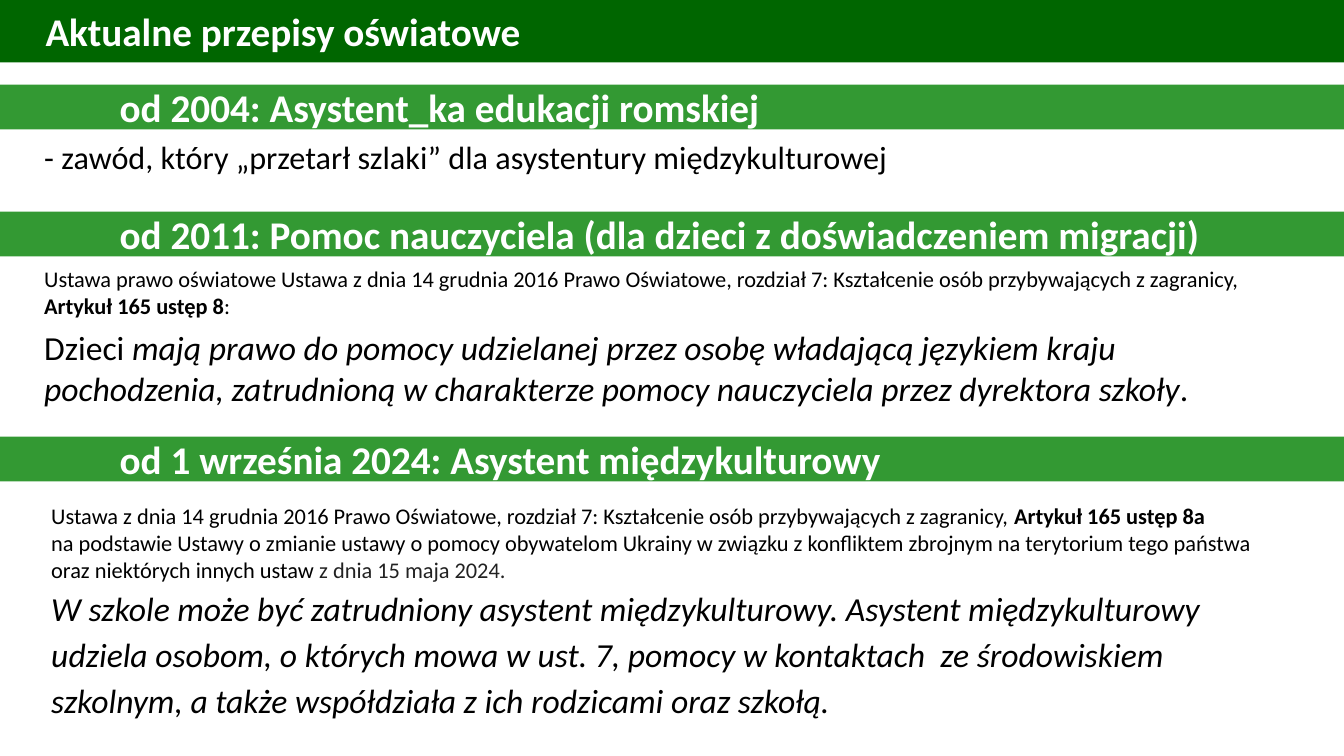
from dataclasses import dataclass

from pptx import Presentation
from pptx.dml.color import RGBColor
from pptx.enum.shapes import MSO_SHAPE
from pptx.enum.text import MSO_ANCHOR, MSO_AUTO_SIZE, PP_ALIGN
from pptx.util import Pt

DARK_GREEN = RGBColor(0x00, 0x66, 0x00)
GREEN = RGBColor(0x33, 0x99, 0x33)
WHITE = RGBColor(0xFF, 0xFF, 0xFF)
BLACK = RGBColor(0x00, 0x00, 0x00)
DARK_GREY = RGBColor(0x22, 0x22, 0x22)
FONT = "Calibri"
PAGE_WIDTH = 960
PAGE_HEIGHT = 540
BAND_HEIGHT = 32
BODY_WIDTH = 900.7


@dataclass
class Box:
    left: float
    top: float
    width: float
    height: float

    def lengths(self):
        return [Pt(value) for value in (self.left, self.top, self.width, self.height)]


@dataclass
class Span:
    text: str
    bold: bool = False
    italic: bool = False
    color: RGBColor = BLACK
    line_break: bool = False


@dataclass
class Para:
    size: float
    spans: list
    space_before: float = 0
    line_spacing: float = 1.0


def style(font, size, color, bold=False, italic=False):
    font.name = FONT
    font.size = Pt(size)
    font.color.rgb = color
    font.bold = bold
    font.italic = italic


def add_band(page, box, text, color, indent):
    band = page.shapes.add_shape(MSO_SHAPE.RECTANGLE, *box.lengths())
    band.shadow.inherit = False
    band.fill.solid()
    band.fill.fore_color.rgb = color
    band.line.fill.background()
    frame = band.text_frame
    frame.text = text
    frame.word_wrap = True
    frame.vertical_anchor = MSO_ANCHOR.MIDDLE
    frame.margin_left = Pt(indent)
    para = frame.paragraphs[0]
    para.alignment = PP_ALIGN.LEFT
    style(para.runs[0].font, 28, WHITE, bold=True)


def add_body(page, box, contents):
    frame = page.shapes.add_textbox(*box.lengths()).text_frame
    frame.word_wrap = True
    frame.auto_size = MSO_AUTO_SIZE.SHAPE_TO_FIT_TEXT
    for index, content in enumerate(contents):
        para = frame.add_paragraph() if index else frame.paragraphs[0]
        para.space_before = Pt(content.space_before)
        para.line_spacing = content.line_spacing
        for span in content.spans:
            run = para.add_run()
            run.text = span.text
            style(run.font, content.size, span.color, span.bold, span.italic)
            if span.line_break:
                para.add_line_break()


def add_section(page, box, heading, body_left, body_offset, contents):
    band_box = Box(box.left, box.top, box.width, BAND_HEIGHT)
    add_band(page, band_box, heading, GREEN, 85.5)
    body_box = Box(box.left + body_left, box.top + body_offset,
                   BODY_WIDTH, box.height - body_offset)
    add_body(page, body_box, contents)


ROMA_ASSISTANT = [
    Para(23, [Span("- zawód, który „przetarł szlaki” dla asystentury międzykulturowej")]),
]
TEACHER_AID = [
    Para(16, [
        Span("Ustawa prawo oświatowe Ustawa z dnia 14 grudnia 2016 Prawo Oświatowe, "
             "rozdział 7: Kształcenie osób przybywających z zagranicy, "),
        Span("Artykuł 165 ustęp 8", bold=True),
        Span(":"),
    ]),
    Para(24, [
        Span("Dzieci "),
        Span("mają prawo do pomocy udzielanej przez osobę władającą językiem kraju "
             "pochodzenia, zatrudnioną w charakterze pomocy nauczyciela przez "
             "dyrektora szkoły", italic=True),
        Span("."),
    ], space_before=6),
]
INTERCULTURAL_ASSISTANT = [
    Para(16, [
        Span("Ustawa z dnia 14 grudnia 2016 Prawo Oświatowe, rozdział 7: "
             "Kształcenie osób przybywających z zagranicy, "),
        Span("Artykuł 165 ustęp 8a", bold=True, line_break=True),
        Span("na podstawie Ustawy o zmianie ustawy o pomocy obywatelom Ukrainy "
             "w związku z konfliktem zbrojnym na terytorium tego państwa "
             "oraz niektórych innych ustaw"),
        Span(" z dnia 15 maja 2024.", color=DARK_GREY),
    ]),
    Para(24, [
        Span("W szkole może być zatrudniony asystent międzykulturowy. Asystent "
             "międzykulturowy udziela osobom, o których mowa w ust. 7, pomocy "
             "w kontaktach  ze środowiskiem szkolnym, a także współdziała "
             "z ich rodzicami oraz szkołą.", italic=True),
    ], line_spacing=1.14),
]
SECTIONS = [
    (60.5, 71.3, "od 2004: Asystent_ka edukacji romskiej",
     24.5, 34.1, ROMA_ASSISTANT),
    (151.2, 144.7, "od 2011: Pomoc nauczyciela (dla dzieci z doświadczeniem migracji)",
     24.5, 34.6, TEACHER_AID),
    (311.8, 205.9, "od 1 września 2024: Asystent międzykulturowy",
     29.5, 43.2, INTERCULTURAL_ASSISTANT),
]


def main():
    deck = Presentation()
    deck.slide_width = Pt(PAGE_WIDTH)
    deck.slide_height = Pt(PAGE_HEIGHT)
    page = deck.slides.add_slide(deck.slide_layouts[6])
    add_band(page, Box(0, 0, PAGE_WIDTH, 44.6), "Aktualne przepisy oświatowe",
             DARK_GREEN, 32.5)
    for top, height, heading, body_left, body_offset, contents in SECTIONS:
        add_section(page, Box(0, top, PAGE_WIDTH, height), heading,
                    body_left, body_offset, contents)
    deck.save("out.pptx")


if __name__ == "__main__":
    main()
